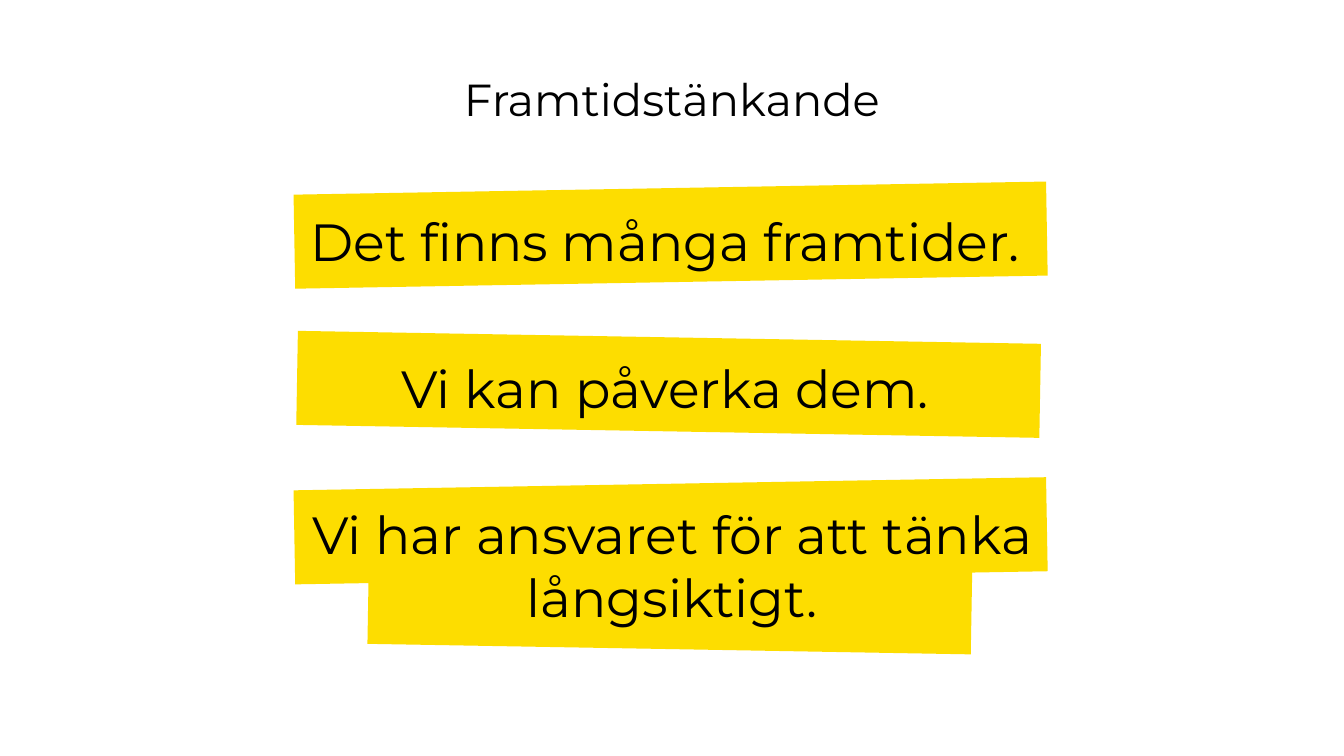
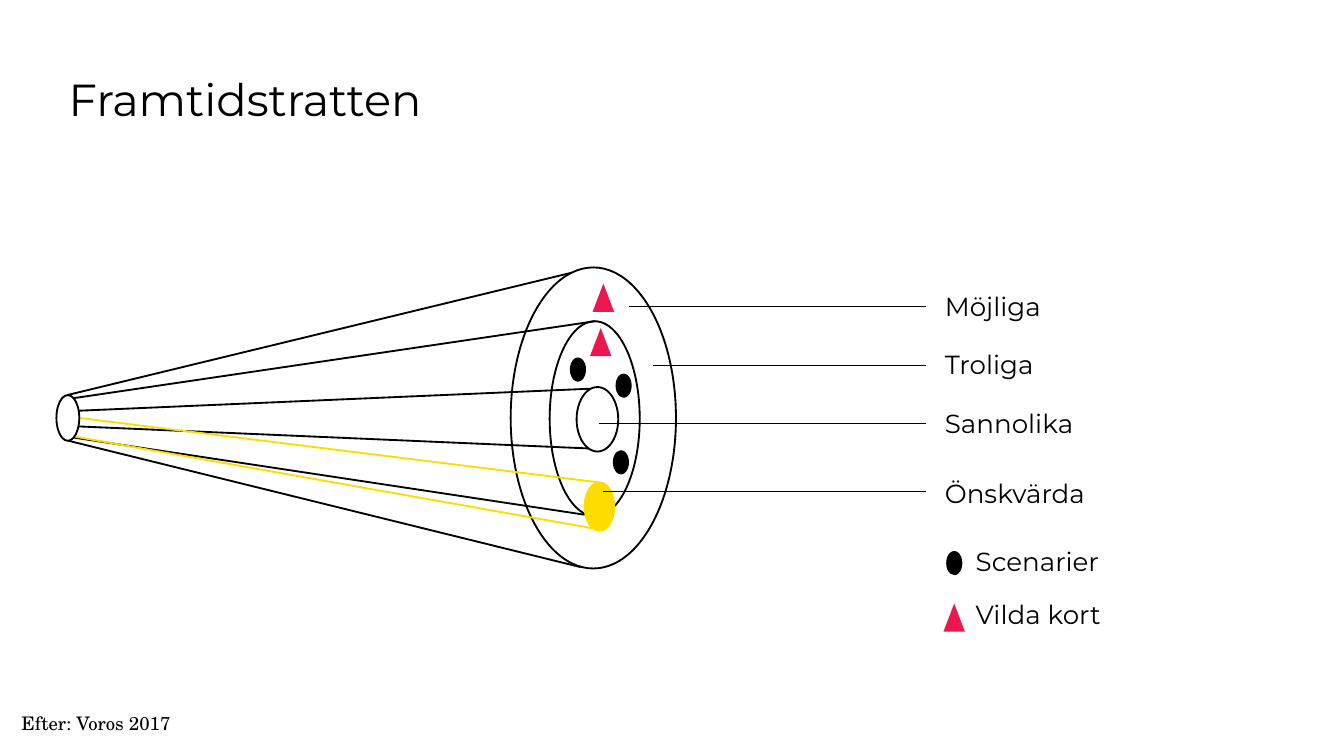
from lxml.etree import SubElement
from pptx import Presentation
from pptx.dml.color import RGBColor
from pptx.enum.shapes import MSO_CONNECTOR, MSO_SHAPE
from pptx.enum.text import MSO_ANCHOR, MSO_AUTO_SIZE, PP_ALIGN
from pptx.oxml.ns import qn
from pptx.util import Emu, Pt

# Shared look: 100 px to the inch
EMU_PER_PX = 9144
COLORS = {"ink": "000000", "paper": "FFFFFF", "yellow": "FDDD00", "red": "ED174F"}
SANS, SERIF = "Montserrat", "TeX Gyre Schola"
DOT, CARD = (12, 18), (16, 21)


def px(n):
    return Emu(n * EMU_PER_PX)


def rgb(name):
    return RGBColor.from_string(COLORS[name])


def set_text(shape, lines, size, font=SANS, align=PP_ALIGN.LEFT,
             anchor=MSO_ANCHOR.TOP, gap=0, left_inset=0):
    tf = shape.text_frame
    tf.word_wrap = True
    tf.auto_size = MSO_AUTO_SIZE.NONE
    tf.vertical_anchor = anchor
    tf.margin_left = px(left_inset)
    tf.margin_top = tf.margin_right = tf.margin_bottom = 0
    for i, line in enumerate(lines):
        p = tf.paragraphs[0] if i == 0 else tf.add_paragraph()
        p.alignment = align
        p.space_before = Pt(gap if i else 0)
        r = p.add_run()
        r.text = line
        r.font.name = font
        r.font.size = Pt(size)
        r.font.color.rgb = rgb("ink")


def add_text(s, x, y, w, h, lines, size, **style):
    set_text(s.shapes.add_textbox(px(x), px(y), px(w), px(h)), lines, size, **style)


def add_title_slide(prs, title, top, height, align):
    s = prs.slides.add_slide(prs.slide_layouts[5])
    sp = s.shapes.title
    sp.left, sp.top, sp.width, sp.height = px(51), px(top), px(898), px(height)
    set_text(sp, [title], 24, align=align, anchor=MSO_ANCHOR.MIDDLE)
    return s


def add_shape(s, kind, x, y, w, h, fill=None, line=None, rotation=0):
    sp = s.shapes.add_shape(kind, px(x), px(y), px(w), px(h))
    sp.shadow.inherit = False
    sp.rotation = rotation
    if fill:
        sp.fill.solid()
        sp.fill.fore_color.rgb = rgb(fill)
    else:
        sp.fill.background()
    if line:
        sp.line.color.rgb = rgb(line)
        sp.line.width = Pt(1)
    else:
        sp.line.fill.background()


def add_line(s, x1, y1, x2, y2, color="ink", width=1):
    c = s.shapes.add_connector(MSO_CONNECTOR.STRAIGHT, px(x1), px(y1), px(x2), px(y2))
    c.line.color.rgb = rgb(color)
    c.line.width = Pt(width)
    SubElement(c.element.spPr, qn("a:effectLst"))


def add_scenario(s, x, y):
    add_shape(s, MSO_SHAPE.OVAL, x, y, *DOT, fill="ink")


def add_wild_card(s, x, y):
    add_shape(s, MSO_SHAPE.FLOWCHART_EXTRACT, x, y, *CARD, fill="red")


def add_label(s, text, y, leader_y, leader_end):
    add_text(s, 703, y, 172, 24, [text], 14)
    add_line(s, 689, leader_y, leader_end, leader_y, width=0.5)


def build_statements(prs):
    s = add_title_slide(prs, "Framtidstänkande", 53, 40, PP_ALIGN.CENTER)

    # Tilted highlight bands
    for x, y, w, tilt in [(274, 413, 449, 1), (219, 360, 560, 359),
                          (221, 251, 553, 1), (219, 140, 560, 359)]:
        add_shape(s, MSO_SHAPE.RECTANGLE, x, y, w, 70, fill="yellow", rotation=tilt)

    # Statements
    add_text(s, 184, 150, 632, 323,
             ["Det finns många framtider. ", "Vi kan påverka dem. ",
              "Vi har ansvaret för att tänka långsiktigt."],
             28, align=PP_ALIGN.CENTER, anchor=MSO_ANCHOR.MIDDLE, gap=45)


def build_funnel(prs):
    s = add_title_slide(prs, "Framtidstratten", 29, 88, PP_ALIGN.LEFT)

    # Funnel sides
    for ends in [(445, 289, 50, 306), (50, 297, 443, 239), (50, 294, 425, 203),
                 (445, 334, 51, 317), (51, 325, 435, 383), (51, 328, 432, 422)]:
        add_line(s, *ends)

    # Funnel openings: probable, plausible, possible
    add_shape(s, MSO_SHAPE.OVAL, 429, 288, 31, 48, fill="paper", line="ink")
    add_shape(s, MSO_SHAPE.OVAL, 409, 239, 67, 145, line="ink")
    add_shape(s, MSO_SHAPE.OVAL, 380, 199, 123, 224, line="ink")

    # Preferable future, then the narrow end of the funnel
    add_shape(s, MSO_SHAPE.OVAL, 435, 359, 22, 36, fill="yellow", line="yellow")
    add_line(s, 45, 323, 446, 394, "yellow")
    add_line(s, 59, 311, 446, 359, "yellow")
    add_shape(s, MSO_SHAPE.OVAL, 42, 294, 17, 34, fill="paper", line="ink")

    # Scenarios and wild cards, the last of each in the legend
    for x, y in [(456, 335), (424, 266), (458, 278), (704, 410)]:
        add_scenario(s, x, y)
    for x, y in [(441, 211), (439, 244), (702, 449)]:
        add_wild_card(s, x, y)
    for text, y in [("Scenarier", 406), ("Vilda kort", 445)]:
        add_text(s, 726, y, 138, 24, [text], 14)

    # Labels with leader lines
    for label in [("Möjliga", 216, 228, 468), ("Troliga", 259, 272, 486),
                  ("Sannolika", 303, 315, 446), ("Önskvärda", 355, 366, 449)]:
        add_label(s, *label)

    # Source
    add_text(s, 0, 530, 225, 33, ["Efter: Voros 2017"], 10, font=SERIF, left_inset=16)


def main():
    prs = Presentation()
    prs.slide_width = px(1000)
    prs.slide_height = Emu(prs.slide_width * 9 // 16)
    build_statements(prs)
    build_funnel(prs)
    prs.save("out.pptx")


if __name__ == "__main__":
    main()
